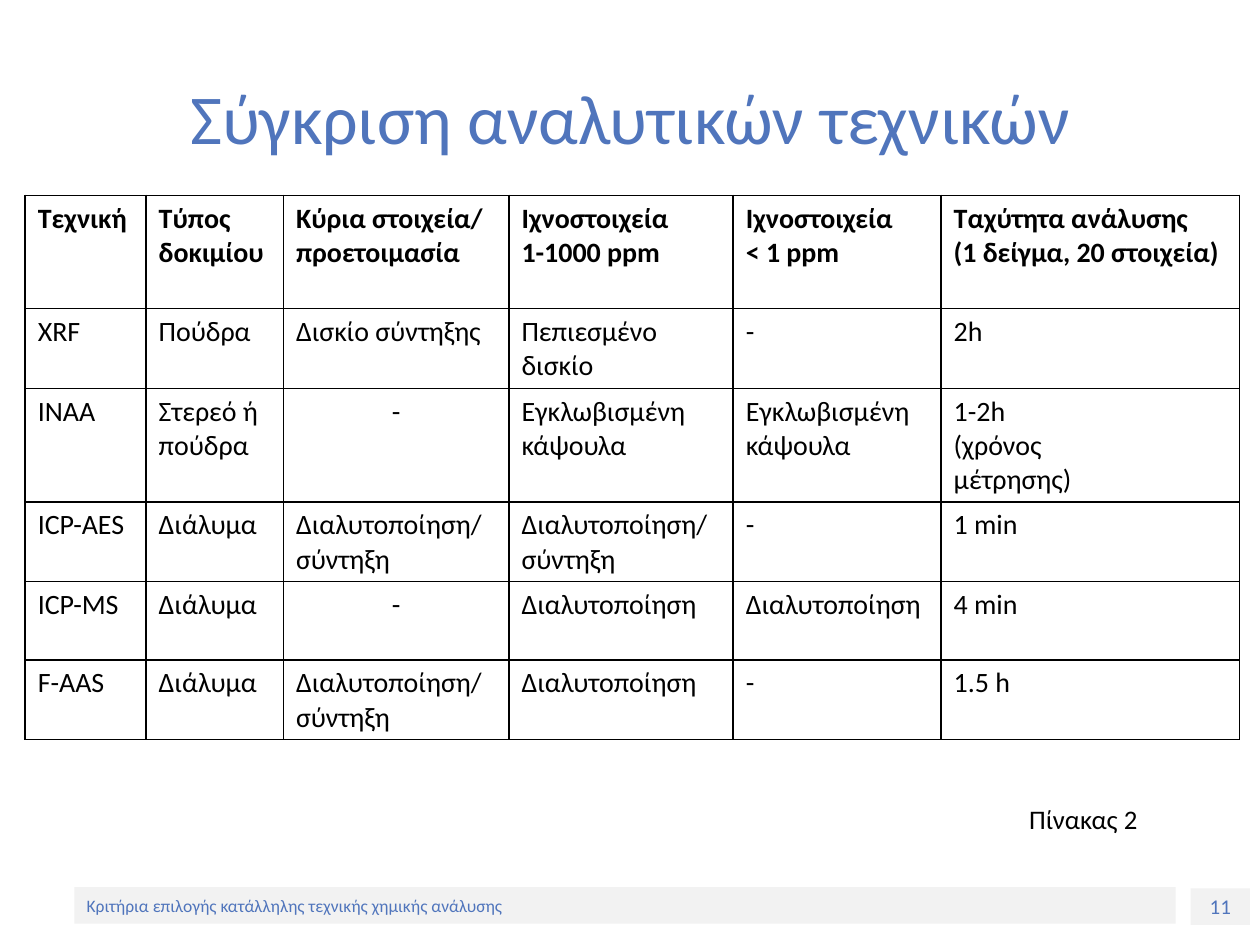
from lxml import etree
from pptx import Presentation
from pptx.dml.color import RGBColor
from pptx.enum.shapes import MSO_SHAPE
from pptx.enum.text import MSO_ANCHOR, PP_ALIGN
from pptx.oxml.ns import qn
from pptx.util import Inches, Pt

LEFT, CENTER, JUSTIFY = PP_ALIGN.LEFT, PP_ALIGN.CENTER, PP_ALIGN.JUSTIFY
MIDDLE = MSO_ANCHOR.MIDDLE
RECT = MSO_SHAPE.RECTANGLE
BLUE, BLACK, GREY = "5075BC", "000000", "F2F2F2"


def rgb(color):
    return RGBColor.from_string(color)


class SlideBuilder:
    """Style and current slide; lengths are in grid units of 0.1 inch."""

    font = "Calibri"
    unit = 0.1
    hang = 3.8

    def __init__(self, prs):
        self.s = prs.slides.add_slide(prs.slide_layouts[6])

    def size(self, units):
        return Inches(round(units * self.unit, 3))

    def box(self, *lengths):
        return [self.size(n) for n in lengths]

    def add_text_run(self, p, text, size, color, align=LEFT, bold=False):
        p.alignment = align
        r = p.add_run()
        r.text = text
        r.font.name, r.font.size, r.font.bold = self.font, Pt(size), bold
        r.font.color.rgb = rgb(color)

    def fill_frame(self, sp, text, size, color, align):
        tf = sp.text_frame
        tf.word_wrap = True
        tf.vertical_anchor = MIDDLE
        self.add_text_run(tf.paragraphs[0], text, size, color, align)

    def text(self, at, text, size, color, align=LEFT):
        sp = self.s.shapes.add_textbox(*self.box(*at))
        self.fill_frame(sp, text, size, color, align)

    def bar(self, at, text, size, align=LEFT):
        sp = self.s.shapes.add_shape(RECT, *self.box(*at))
        sp.shadow.inherit = False
        sp.fill.solid()
        sp.fill.fore_color.rgb = rgb(GREY)
        sp.line.fill.background()
        self.fill_frame(sp, text, size, BLUE, align)

    def cell(self, cell, text, align, bold):
        tc_pr = cell._tc.get_or_add_tcPr()
        for side in ("lnL", "lnR", "lnT", "lnB"):
            ln = etree.SubElement(tc_pr, qn(f"a:{side}"), w=str(Pt(1)))
            fill = etree.SubElement(ln, qn("a:solidFill"))
            etree.SubElement(fill, qn("a:srgbClr"), val=BLACK)
        cell.fill.background()
        tf = cell.text_frame
        for i, line in enumerate(text.split("\n")):
            p = tf.add_paragraph() if i else tf.paragraphs[0]
            p_pr = p._p.get_or_add_pPr()
            p_pr.set("marL", str(self.size(self.hang)))
            p_pr.set("indent", str(-self.size(self.hang)))
            self.add_text_run(p, line, 16, BLACK, align, bold)

    def table(self, left, top, cols, heights, rows, align_for):
        at = self.box(left, top, sum(cols), sum(heights))
        table = self.s.shapes.add_table(len(rows), len(cols), *at).table
        table.first_row = table.horz_banding = False
        for col, width in zip(table.columns, cols):
            col.width = self.size(width)
        for i, (row, height) in enumerate(zip(rows, heights)):
            table.rows[i].height = self.size(height)
            for j, text in enumerate(row):
                self.cell(table.cell(i, j), text, align_for(i, j, text), i == 0)


COLS = [9.6, 10.9, 17.9, 17.8, 16.5, 23.7]
ROWS = [
    ["Τεχνική", "Τύπος\nδοκιμίου", "Κύρια στοιχεία/\nπροετοιμασία",
     "Ιχνοστοιχεία\n1-1000 ppm", "Ιχνοστοιχεία\n< 1 ppm",
     "Ταχύτητα ανάλυσης\n(1 δείγμα, 20 στοιχεία)"],
    ["XRF", "Πούδρα", "Δισκίο σύντηξης", "Πεπιεσμένο\nδισκίο", "-", "2h"],
    ["INAA", "Στερεό ή\nπούδρα", "-", "Εγκλωβισμένη\nκάψουλα",
     "Εγκλωβισμένη\nκάψουλα", "1-2h\n(χρόνος\nμέτρησης)"],
    ["ICP-AES", "Διάλυμα", "Διαλυτοποίηση/\nσύντηξη",
     "Διαλυτοποίηση/\nσύντηξη", "-", "1 min"],
    ["ICP-MS", "Διάλυμα", "-", "Διαλυτοποίηση", "Διαλυτοποίηση", "4 min"],
    ["F-AAS", "Διάλυμα", "Διαλυτοποίηση/\nσύντηξη", "Διαλυτοποίηση", "-",
     "1.5 h"],
]
HEIGHTS = [9] + [6.2] * (len(ROWS) - 1)


def technique_align(row, col, text):
    if row == 0:
        return LEFT
    if col == 2 and text == "-":
        return CENTER
    # Techniques, main elements and the end of the XRF row are justified
    return JUSTIFY if col in (0, 2) or (row == 1 and col > 3) else LEFT


def main():
    prs = Presentation()
    prs.slide_width, prs.slide_height = Inches(10), Inches(7.5)
    b = SlideBuilder(prs)

    # Footer: slide number and lecture title
    b.bar((94.5, 70.5, 4.7, 2.9), "11", 12, CENTER)
    b.bar((5.9, 70.4, 87.4, 2.9),
          "Κριτήρια επιλογής κατάλληλης τεχνικής χημικής ανάλυσης", 10)

    # Title
    b.text((5, 3, 90, 12.5), "Σύγκριση αναλυτικών τεχνικών", 40, BLUE, CENTER)

    # Comparison table and its caption
    b.table(2, 15.5, COLS, HEIGHTS, ROWS, technique_align)
    b.text((80.7, 63.4, 12.6, 3.1), "Πίνακας 2", 15.3, BLACK)

    prs.save("out.pptx")


if __name__ == "__main__":
    main()
